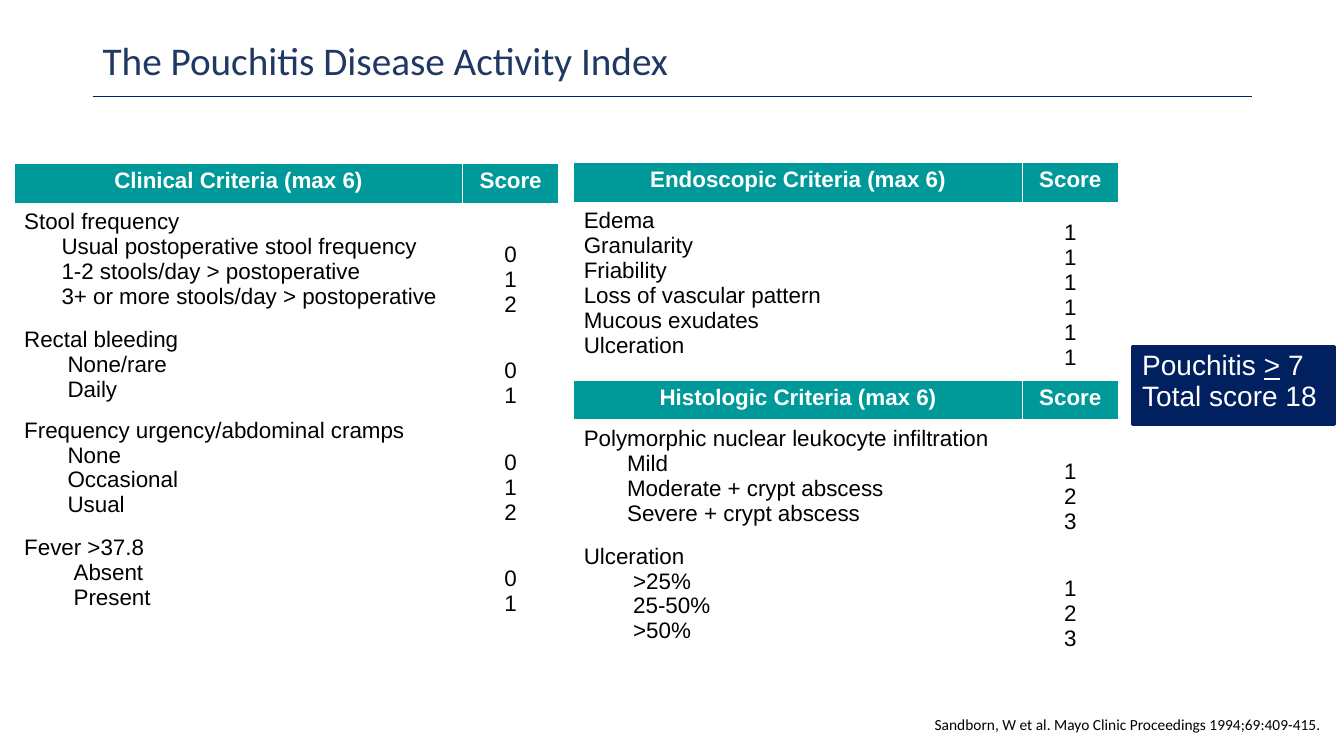
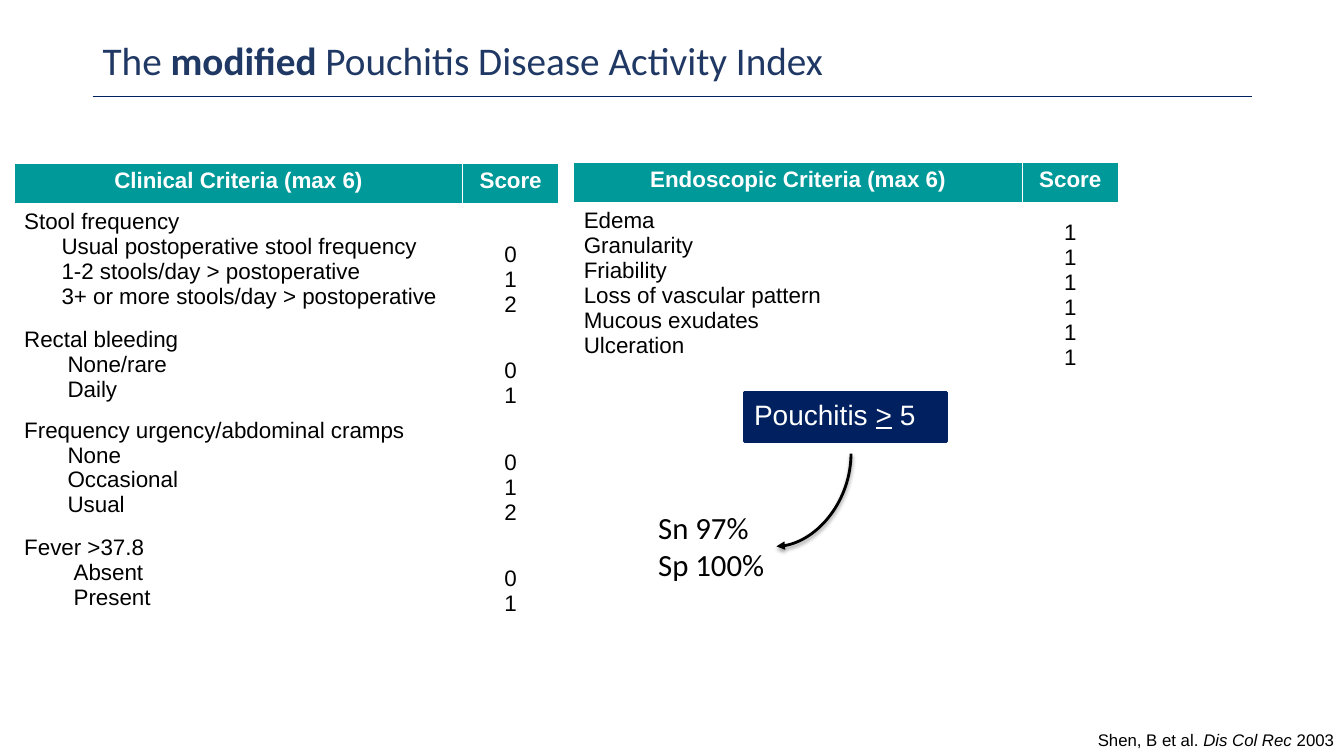
from lxml import etree
from pptx import Presentation
from pptx.dml.color import RGBColor
from pptx.enum import shapes, text
from pptx.oxml import parse_xml
from pptx.oxml.ns import nsdecls, qn
from pptx.util import Inches, Pt

NAVY, TITLE_BLUE, TEAL = "002060", "203864", "009999"
WHITE, BLACK = "FFFFFF", "000000"
LEFT, CENTER, RIGHT = text.PP_ALIGN.LEFT, text.PP_ALIGN.CENTER, text.PP_ALIGN.RIGHT
TOP, MIDDLE, BOTTOM = (text.MSO_ANCHOR.TOP, text.MSO_ANCHOR.MIDDLE,
                       text.MSO_ANCHOR.BOTTOM)

# Each group: heading, indent of its items, items, scores
CLINICAL = [
    ("Stool frequency", 0.37,
     ["Usual postoperative stool frequency", "1-2 stools/day > postoperative",
      "3+ or more stools/day > postoperative"], "012"),
    ("Rectal bleeding", 0.43, ["None/rare", "Daily"], "01"),
    ("Frequency urgency/abdominal cramps", 0.43,
     ["None", "Occasional", "Usual"], "012"),
    ("Fever >37.8", 0.49, ["Absent", "Present"], "01"),
]
ENDOSCOPIC = [
    (None, 0, ["Edema", "Granularity", "Friability", "Loss of vascular pattern",
               "Mucous exudates", "Ulceration"], "111111"),
]
HISTOLOGIC = [
    ("Polymorphic nuclear leukocyte infiltration", 0.43,
     ["Mild", "Moderate + crypt abscess", "Severe + crypt abscess"], "123"),
    ("Ulceration", 0.49, [">25%", "25-50%", ">50%"], "123"),
]


def rgb(value):
    return RGBColor.from_string(value)


def write(frame, lines, size, font="Arial", color=BLACK, bold=None,
          align=LEFT, spacing=None):
    """Fill a text frame; a line is a string or a list of (text, style) runs."""
    for number, line in enumerate(lines):
        paragraph = frame.paragraphs[0] if number == 0 else frame.add_paragraph()
        paragraph.alignment = align
        paragraph.line_spacing = spacing
        paragraph.font.size = Pt(size)
        paragraph.font.name = font
        paragraph.font.color.rgb = rgb(color)
        paragraph.font.bold = bold
        for words, style in [(line, None)] if isinstance(line, str) else line:
            run = paragraph.add_run()
            run.text = words
            if style:
                setattr(run.font, style, True)


def add_text(slide, box, lines, size, anchor=TOP, wrap=True, **style):
    frame = slide.shapes.add_textbox(*map(Inches, box)).text_frame
    frame.word_wrap = wrap
    frame.vertical_anchor = anchor
    write(frame, lines, size, **style)


def add_title(slide, title):
    left, top, width, height = 0.92, 0.16, 11.5, 0.93
    rule = slide.shapes.add_connector(
        shapes.MSO_CONNECTOR.STRAIGHT, Inches(left), Inches(0.96),
        Inches(left + width), Inches(0.96))
    rule.line.color.rgb = rgb(NAVY)
    rule.line.width = Pt(1)
    etree.SubElement(rule._element.spPr, qn("a:effectLst"))
    add_text(slide, (left, top, width, height), [title], 28, anchor=MIDDLE,
             font="Calibri", color=TITLE_BLUE, spacing=0.9)


def style_cell(cell, fill=None, bottom=1):
    """White borders, drawn before the fill as the schema asks."""
    properties = cell._tc.get_or_add_tcPr()
    for side, width in (("L", 1), ("R", 1), ("T", 1), ("B", bottom)):
        properties.append(parse_xml(
            f'<a:ln{side} {nsdecls("a")} w="{Pt(width)}"><a:solidFill>'
            f'<a:srgbClr val="{WHITE}"/></a:solidFill></a:ln{side}>'))
    if fill:
        cell.fill.solid()
        cell.fill.fore_color.rgb = rgb(fill)
    else:
        cell.fill.background()


def add_criteria(slide, left, top, name, groups):
    """Score table: one header row, then one row for each group."""
    widths = (4.45, 0.95)
    heights = [0.41] + [0.1 + 0.24 * (len(items) + bool(heading))
                        for heading, _, items, _ in groups]
    table = slide.shapes.add_table(
        len(heights), 2, Inches(left), Inches(top),
        Inches(sum(widths)), Inches(sum(heights))).table
    table.horz_banding = False
    for column, width in zip(table.columns, widths):
        column.width = Inches(width)
    for row, height in zip(table.rows, heights):
        row.height = Inches(height)

    for column, label in enumerate((name, "Score")):
        cell = table.cell(0, column)
        style_cell(cell, TEAL, bottom=3)
        write(cell.text_frame, [label], 16, color=WHITE, bold=True, align=CENTER)

    for row, (heading, indent, items, scores) in enumerate(groups, 1):
        label_cell, score_cell = table.cell(row, 0), table.cell(row, 1)
        style_cell(label_cell)
        style_cell(score_cell)
        headings = [heading] if heading else []
        write(label_cell.text_frame, headings + items, 16, bold=False)
        for paragraph in label_cell.text_frame.paragraphs[len(headings):]:
            paragraph._p.get_or_add_pPr().set("marL", str(Inches(indent)))
        # Scores sit beside the items, below the heading
        score_cell.vertical_anchor = BOTTOM
        write(score_cell.text_frame, list(scores), 16, bold=False, align=CENTER)


def add_callout(slide, left, top, height, lines, spacing=None):
    callout = slide.shapes.add_shape(
        shapes.MSO_SHAPE.RECTANGLE, Inches(left), Inches(top),
        Inches(2.01), Inches(height))
    callout.shadow.inherit = False
    callout.fill.solid()
    callout.fill.fore_color.rgb = rgb(NAVY)
    callout.line.color.rgb = rgb(NAVY)
    callout.line.width = Pt(2.25)
    callout.text_frame.word_wrap = True
    callout.text_frame.vertical_anchor = TOP
    write(callout.text_frame, lines, 20, color=WHITE, spacing=spacing)


def threshold(score):
    return [("Pouchitis ", None), (">", "underline"), (f" {score}", None)]


def add_curved_arrow(slide, left, top, width, height):
    """Quarter curve turned by 90 degrees: runs down, then to the left."""
    arrow = slide.shapes.add_connector(
        shapes.MSO_CONNECTOR.CURVE, Inches(left), Inches(top),
        Inches(left + width), Inches(top + height))
    arrow.line.color.rgb = rgb(BLACK)
    arrow.line.width = Pt(2)
    properties = arrow._element.spPr
    properties.find(qn("a:xfrm")).set("rot", "5400000")
    properties.find(qn("a:prstGeom")).set("prst", "curvedConnector2")
    etree.SubElement(properties.find(qn("a:ln")), qn("a:tailEnd"), type="triangle")
    properties.append(parse_xml(
        f'<a:effectLst {nsdecls("a")}><a:outerShdw blurRad="{Pt(3.1)}" '
        f'dist="{Pt(1.6)}" dir="5400000" rotWithShape="0">'
        f'<a:srgbClr val="{BLACK}"><a:alpha val="38000"/></a:srgbClr>'
        '</a:outerShdw></a:effectLst>'))


def add_index_slide(presentation, title):
    """Parts that both versions of the index share."""
    slide = presentation.slides.add_slide(presentation.slide_layouts[6])
    add_title(slide, title)
    add_criteria(slide, 0.14, 1.62, "Clinical Criteria (max 6)", CLINICAL)
    add_criteria(slide, 5.69, 1.61, "Endoscopic Criteria (max 6)", ENDOSCOPIC)
    return slide


def build_full_index(presentation):
    slide = add_index_slide(presentation, "The Pouchitis Disease Activity Index")
    add_criteria(slide, 5.69, 3.77, "Histologic Criteria (max 6)", HISTOLOGIC)
    add_callout(slide, 11.23, 3.44, 0.77, [threshold(7), "Total score 18"], 0.9)
    add_text(slide, (8.36, 7.04, 4.84, 0.29),
             ["Sandborn, W et al. Mayo Clinic Proceedings 1994;69:409-415."],
             11, font="Calibri", align=RIGHT)


def build_modified_index(presentation):
    slide = add_index_slide(presentation, [
        ("The ", None), ("modified", "bold"),
        (" Pouchitis Disease Activity Index", None)])
    add_callout(slide, 7.38, 3.89, 0.49, [threshold(5)])
    add_text(slide, (9.33, 7.19, 4, 0.3),
             [[("Shen, B et al. ", None), ("Dis Col Rec ", "italic"),
               ("2003", None)]], 12, align=RIGHT)
    # Sensitivity and specificity at the threshold
    add_text(slide, (6.43, 5, 1.26, 0.84), ["Sn 97%", "Sp 100%"], 22,
             wrap=False, font="Calibri")
    add_curved_arrow(slide, 7.61, 4.59, 0.92, 0.74)


def main():
    presentation = Presentation()
    presentation.slide_width = Inches(13.33)
    presentation.slide_height = Inches(7.5)
    build_full_index(presentation)
    build_modified_index(presentation)
    presentation.save("out.pptx")


if __name__ == "__main__":
    main()
